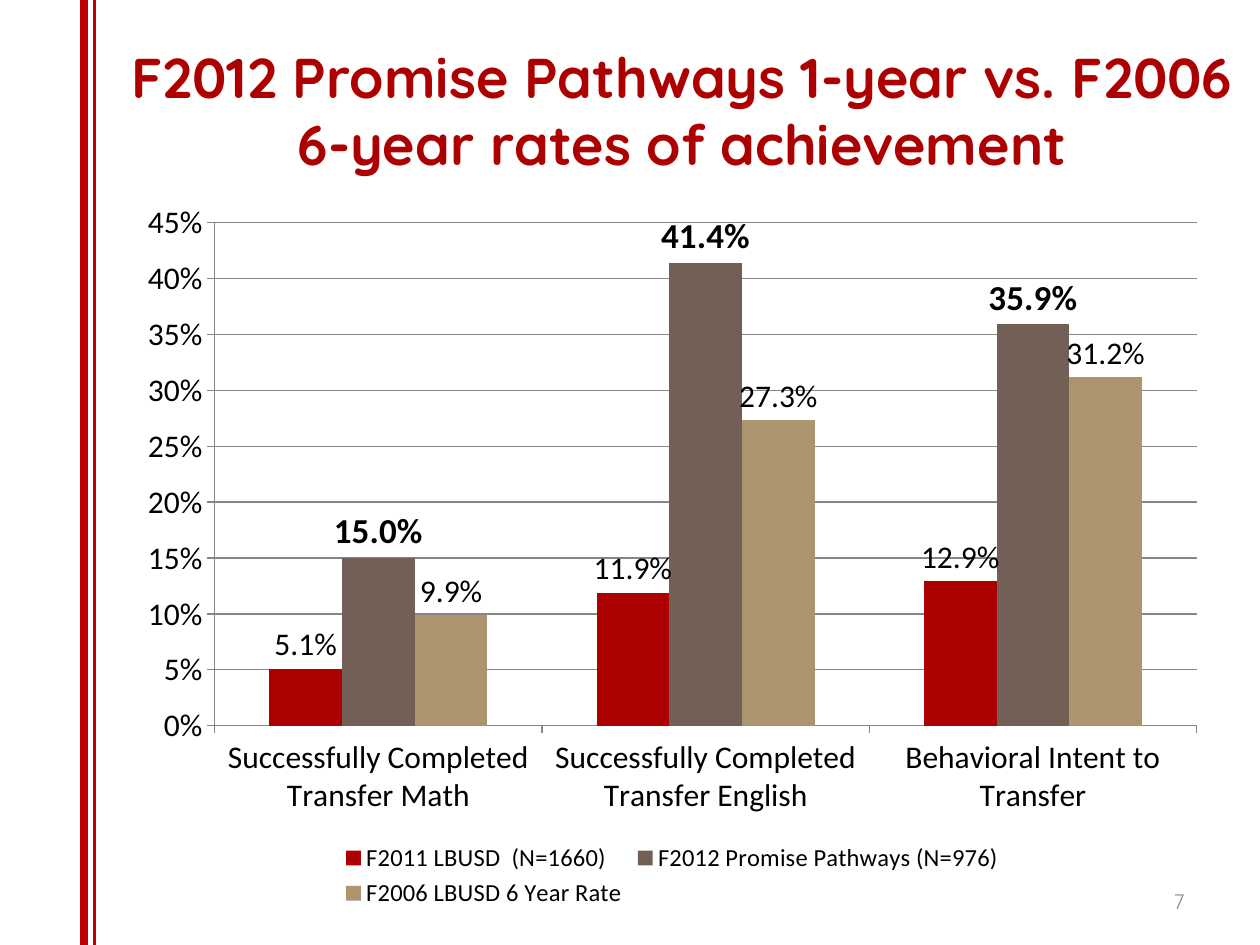
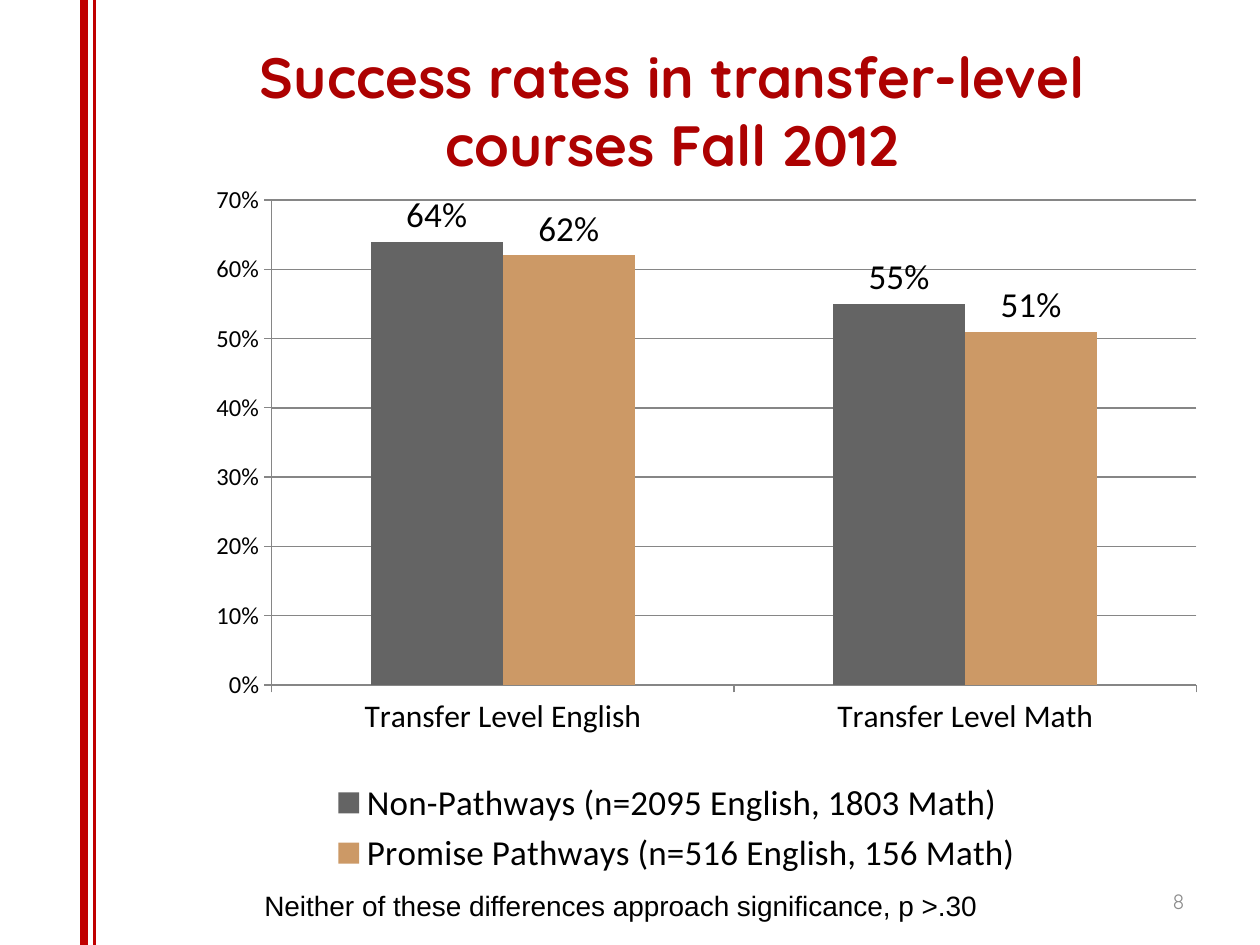
"""Build two slides of column charts on Promise Pathways results."""
from lxml.etree import SubElement
from pptx import Presentation
from pptx.chart.data import CategoryChartData
from pptx.dml.color import RGBColor
from pptx.enum.chart import XL_CHART_TYPE, XL_LABEL_POSITION, XL_LEGEND_POSITION, XL_TICK_MARK
from pptx.enum.shapes import MSO_CONNECTOR
from pptx.enum.text import MSO_ANCHOR, MSO_AUTO_SIZE, PP_ALIGN
from pptx.oxml import parse_xml
from pptx.oxml.ns import nsdecls, qn
from pptx.util import Inches, Pt

RED = RGBColor(0xAD, 0x01, 0x01)
BAND = RGBColor(0xC0, 0x00, 0x00)
BROWN = RGBColor(0x72, 0x60, 0x56)
SAND = RGBColor(0xAC, 0x95, 0x6E)
GRAY = RGBColor(0x64, 0x64, 0x64)
TAN = RGBColor(0xCC, 0x99, 0x66)
RULE = RGBColor(0x86, 0x86, 0x86)
PALE = RGBColor(0x8C, 0x8C, 0x8C)
BLACK = RGBColor(0, 0, 0)
HEAD = "Quicksand"

SLIDES = [
    dict(
        title="F2012 Promise Pathways 1-year vs. F2006 6-year rates of achievement",
        head=(0.83, 0.33, 9.17, 1.08), size=32, num="7", note=None,
        box=(1, 1.5, 8.67, 5.75), text=18, cat=18, key=14,
        top=0.45, step=0.05, form="0.0%", plot=None,
        cats=["Successfully Completed Transfer Math",
              "Successfully Completed Transfer English",
              "Behavioral Intent to Transfer"],
        rows=[("F2011 LBUSD  (N=1660)", (0.051, 0.119, 0.129), RED, 18, False),
              ("F2012 Promise Pathways (N=976)", (0.15, 0.414, 0.359), BROWN, 20, True),
              ("F2006 LBUSD 6 Year Rate", (0.099, 0.273, 0.312), SAND, 18, False)],
    ),
    dict(
        title="Success rates in transfer-level courses Fall 2012",
        head=(1.17, 0.33, 8.33, 1.08), size=32.4, num="8",
        note="Neither of these differences approach significance, p >.30",
        box=(1.25, 1.42, 8.25, 5.58), text=14, cat=18, key=20,
        top=0.7, step=0.1, form="0%", plot=(0.11, 0.03, 0.89, 0.69),
        cats=["Transfer Level English", "Transfer Level Math"],
        rows=[("Non-Pathways (n=2095 English, 1803 Math)", (0.64, 0.55), GRAY, 20, False),
              ("Promise Pathways (n=516 English, 156 Math)", (0.62, 0.51), TAN, 20, False)],
    ),
]


def write(shape, text, size, font, color, bold=False, align=PP_ALIGN.LEFT, anchor=MSO_ANCHOR.MIDDLE):
    frame = shape.text_frame
    frame.word_wrap = True
    frame.auto_size = MSO_AUTO_SIZE.NONE
    frame.vertical_anchor = anchor
    para = frame.paragraphs[0]
    para.alignment = align
    run = para.add_run()
    run.text = text
    run.font.size = Pt(size)
    run.font.name = font
    run.font.bold = bold
    run.font.color.rgb = color


deck = Presentation()
deck.slide_width, deck.slide_height = Inches(10), Inches(7.5)

for item in SLIDES:
    slide = deck.slides.add_slide(deck.slide_layouts[5])
    shapes = slide.shapes

    for x, width in ((0.75, 2.25), (0.67, 4.5)):
        line = shapes.add_connector(MSO_CONNECTOR.STRAIGHT, Inches(x), Inches(7.5), Inches(x), 0)
        line.line.color.rgb = BAND
        line.line.width = Pt(width)
        SubElement(line._element.spPr, qn("a:effectLst"))

    title = shapes.title
    title.left, title.top, title.width, title.height = map(Inches, item["head"])
    write(title, item["title"], item["size"], HEAD, RED, bold=True, align=PP_ALIGN.CENTER)

    data = CategoryChartData(number_format=item["form"])
    data.categories = item["cats"]
    for name, vals, *_ in item["rows"]:
        data.add_series(name, vals)
    chart = shapes.add_chart(XL_CHART_TYPE.COLUMN_CLUSTERED, *map(Inches, item["box"]), data).chart
    chart.has_title = False
    chart.font.name = "Calibri"
    chart.font.size = Pt(item["text"])
    chart.font.color.rgb = BLACK

    plot = chart.plots[0]
    plot.gap_width = 150
    plot.vary_by_categories = False
    for bars, (_, _, color, size, bold) in zip(plot.series, item["rows"]):
        bars.format.fill.solid()
        bars.format.fill.fore_color.rgb = color
        bars.invert_if_negative = False
        labels = bars.data_labels
        labels.show_value = True
        labels.number_format = item["form"]
        labels.number_format_is_linked = False
        labels.position = XL_LABEL_POSITION.OUTSIDE_END
        labels.font.name = "Calibri"
        labels.font.size = Pt(size)
        labels.font.bold = bold
        labels.font.color.rgb = BLACK

    cat, val = chart.category_axis, chart.value_axis
    cat.tick_labels.font.size = Pt(item["cat"])
    val.minimum_scale, val.maximum_scale = 0, item["top"]
    val.major_unit = item["step"]
    val.tick_labels.number_format = "0%"
    val.tick_labels.number_format_is_linked = False
    val.has_major_gridlines = True
    for axis in (cat, val):
        axis.major_tick_mark = XL_TICK_MARK.OUTSIDE
    for part in (cat, val, val.major_gridlines):
        part.format.line.color.rgb = RULE
        part.format.line.width = Pt(0.75)

    chart.has_legend = True
    chart.legend.position = XL_LEGEND_POSITION.BOTTOM
    chart.legend.include_in_layout = False
    chart.legend.font.size = Pt(item["key"])

    if item["plot"]:
        area = chart._chartSpace.chart.plotArea
        for old in area.findall(qn("c:layout")):
            area.remove(old)
        spots = "".join(f'<c:{tag} val="{num}"/>' for tag, num in zip("xywh", item["plot"]))
        area.insert(0, parse_xml(
            f'<c:layout {nsdecls("c")}><c:manualLayout><c:layoutTarget val="inner"/>'
            f'<c:xMode val="edge"/><c:yMode val="edge"/>{spots}</c:manualLayout></c:layout>'))

    if item["note"]:
        note = shapes.add_textbox(Inches(2), Inches(7), Inches(7), Inches(0.37))
        write(note, item["note"], 16, "Arial", BLACK, anchor=MSO_ANCHOR.TOP)

    page = shapes.add_textbox(Inches(7.17), Inches(6.95), Inches(2.33), Inches(0.4))
    write(page, item["num"], 12, HEAD, PALE, align=PP_ALIGN.RIGHT)

deck.save("out.pptx")
